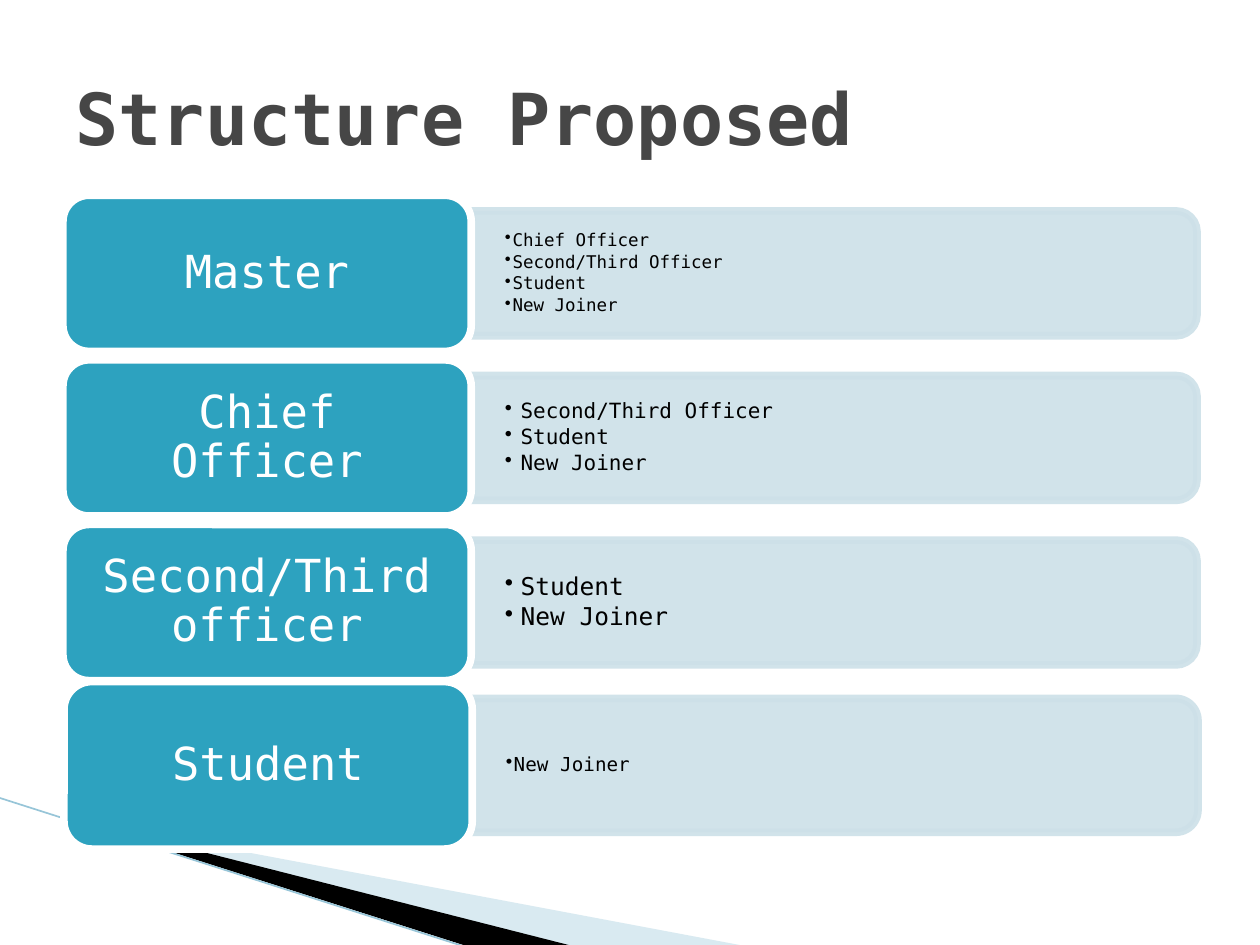
from lxml import etree
from pptx import Presentation
from pptx.dml.color import RGBColor
from pptx.enum import shapes, text
from pptx.oxml.ns import qn
from pptx.util import Pt

FONT = "DejaVu Sans Mono"
TEAL = RGBColor(0x2D, 0xA2, 0xBF)
PALE = RGBColor(0xCD, 0xE0, 0xE8)
SKY = RGBColor(0xA0, 0xCB, 0xDC)
EDGE = RGBColor(0x97, 0xC5, 0xD8)
GREY = RGBColor(0x46, 0x46, 0x46)
BLACK = RGBColor(0, 0, 0)
WHITE = RGBColor(255, 255, 255)

KEY_W, BAR_W = 233.3, 414.7
PITCH = 94.05
FIRST = (36, 111.6, 89.2)
LAST = (36.6, 389.5, 95.7)
ROWS = [
    ("Master", 10, 4.5,
     ["Chief Officer", "Second/Third Officer", "Student", "New Joiner"]),
    ("Chief Officer", 12, 9,
     ["Second/Third Officer", "Student", "New Joiner"]),
    ("Second/Third officer", 14, 9, ["Student", "New Joiner"]),
    ("Student", 11, 4.5, ["New Joiner"]),
]


def fade(fill, pct):
    """Make a solid fill or line colour partly opaque."""
    clr = fill._xPr.find(qn("a:solidFill"))[0]
    etree.SubElement(clr, qn("a:alpha"), val=str(pct * 1000))


def paint(shp, fill, line=None, pct=100):
    """Set fill, outline and opacity of a shape."""
    shp.shadow.inherit = False
    shp.fill.solid()
    shp.fill.fore_color.rgb = fill
    if line is None:
        shp.line.fill.background()
    else:
        shp.line.width = Pt(4.33)
        shp.line.color.rgb = line
    if pct < 100:
        fade(shp.fill, pct)
        if line is not None:
            fade(shp.line.fill, pct)


def frame(shp, side, top):
    """Prepare a middle-anchored wrapping text frame."""
    tf = shp.text_frame
    tf.word_wrap = True
    tf.auto_size = text.MSO_AUTO_SIZE.NONE
    tf.vertical_anchor = text.MSO_ANCHOR.MIDDLE
    tf.margin_left = tf.margin_right = Pt(side)
    tf.margin_top = tf.margin_bottom = Pt(top)
    return tf


def write(para, words, size, color, bold=False):
    """Add one formatted run."""
    run = para.add_run()
    run.text = words
    font = run.font
    font.name, font.size, font.bold = FONT, Pt(size), bold
    font.color.rgb = color


def wedge(slide, points, color, pct=100):
    """Draw a filled corner wedge."""
    pen = slide.shapes.build_freeform(*points[0], scale=Pt(1))
    pen.add_line_segments(points[1:])
    paint(pen.convert_to_shape(), color, pct=pct)


def streak(slide):
    """Draw the thin slanted corner line."""
    line = slide.shapes.add_connector(
        shapes.MSO_CONNECTOR.STRAIGHT, Pt(-0.7), Pt(455.8), Pt(267), Pt(541.4))
    line.line.width = Pt(0.95)
    line.line.color.rgb = EDGE
    etree.SubElement(line._element.spPr, qn("a:effectLst"))


def head(slide):
    """Fill the title placeholder."""
    box = slide.shapes.title
    box.left, box.top, box.width, box.height = Pt(36), Pt(21.6), Pt(648), Pt(90)
    para = frame(box, 7.2, 3.6).paragraphs[0]
    para.alignment = text.PP_ALIGN.LEFT
    write(para, "Structure Proposed", 41, GREY, True)


def bar(slide, left, mid, high):
    """Draw a pale bar rounded on its right end."""
    shp = slide.shapes.add_shape(
        shapes.MSO_SHAPE.ROUND_2_SAME_RECTANGLE,
        Pt(left + (BAR_W - high) / 2), Pt(mid - BAR_W / 2), Pt(high), Pt(BAR_W))
    shp.rotation = 90
    paint(shp, PALE, PALE, 90)


def items(slide, left, mid, high, names, size, dent):
    """Write the bulleted list over a bar."""
    box = slide.shapes.add_textbox(
        Pt(left), Pt(mid - high / 2), Pt(BAR_W - 3.5), Pt(high))
    tf = frame(box, 19.2, 9.6)
    for i, name in enumerate(names):
        para = tf.add_paragraph() if i else tf.paragraphs[0]
        para.level = 1
        para.line_spacing = 0.9
        para.space_after = Pt(round(size * 0.17, 1))
        props = para._p.get_or_add_pPr()
        props.set("marL", str(Pt(dent)))
        props.set("indent", str(-Pt(dent)))
        etree.SubElement(props, qn("a:buChar"), char="•")
        write(para, name, size, BLACK)


def key(slide, left, top, high, name):
    """Draw a teal box naming a rank."""
    shp = slide.shapes.add_shape(
        shapes.MSO_SHAPE.ROUNDED_RECTANGLE,
        Pt(left), Pt(top), Pt(KEY_W), Pt(high))
    paint(shp, TEAL, WHITE)
    para = frame(shp, 12, 8).paragraphs[0]
    para.alignment = text.PP_ALIGN.CENTER
    para.line_spacing = 0.9
    write(para, name, 26, WHITE)


def row(slide, place, name, size, dent, names):
    """Build one rank with those who report to it."""
    left, top, high = place
    mid, side = top + high / 2, left + KEY_W
    bar(slide, side, mid, high * 0.8)
    items(slide, side, mid, high * 0.73, names, size, dent)
    key(slide, left, top, high, name)


def main():
    """Build and save the slide."""
    deck = Presentation()
    deck.slide_width, deck.slide_height = Pt(720), Pt(540)
    slide = deck.slides.add_slide(deck.slide_layouts[5])
    wedge(slide, [(39.6, 468.5), (428.4, 540.7), (328.3, 540.7)], SKY, 40)
    wedge(slide, [(38.2, 467.3), (329, 540.7), (267.8, 541.4), (38.9, 468)],
          BLACK)
    streak(slide)
    head(slide)
    left, top, high = FIRST
    places = [(left, top + i * PITCH, high) for i in range(len(ROWS) - 1)]
    for place, data in zip(places + [LAST], ROWS):
        row(slide, place, *data)
    deck.save("out.pptx")


if __name__ == "__main__":
    main()
